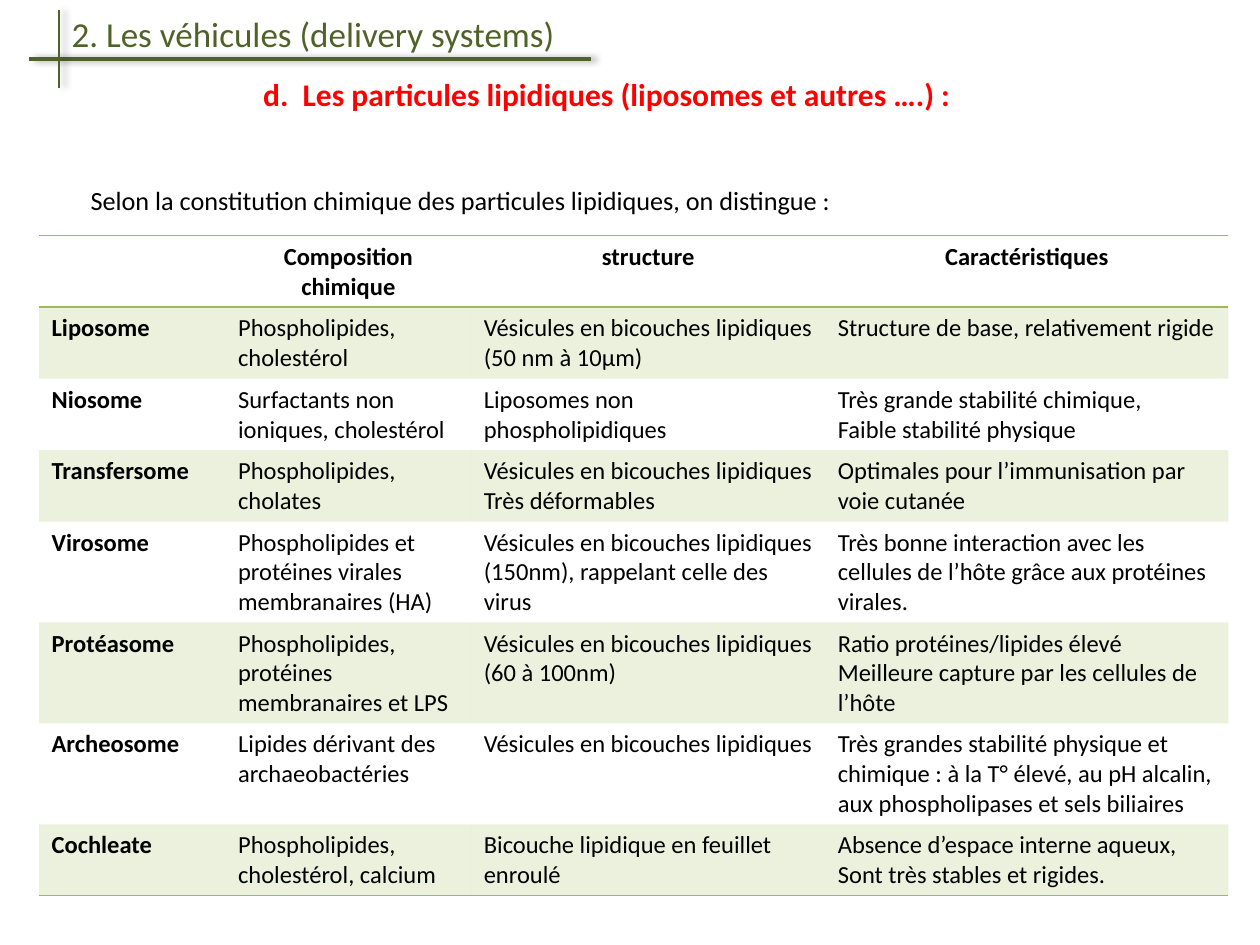
import pptx
import pptx.dml.color
import pptx.enum.shapes
import pptx.enum.text
import pptx.oxml
import pptx.oxml.ns
import pptx.util
from pptx.util import Inches

RGBColor = pptx.dml.color.RGBColor
BLACK = RGBColor(0x00, 0x00, 0x00)
RED = RGBColor(0xFF, 0x00, 0x00)
DARK_GREEN = RGBColor(0x4F, 0x62, 0x28)
GREEN = RGBColor(0x9B, 0xBB, 0x59)
NAMESPACE = pptx.oxml.ns.nsdecls("a")
PLAIN_TABLE_STYLE = "{2D5ABB26-0587-4C30-8999-92F81FD0307C}"


def set_font(paragraph, **values):
    for name, value in {"name": "Calibri", **values}.items():
        if name == "color":
            paragraph.font.color.rgb = value
        else:
            setattr(paragraph.font, name, value)


def add_border(cell, side):
    cell._tc.get_or_add_tcPr().insert(0, pptx.oxml.parse_xml(
        f'<a:{side} {NAMESPACE} w="12700"><a:solidFill><a:srgbClr val="{GREEN}"/>'
        f'</a:solidFill></a:{side}>'))


presentation = pptx.Presentation()
presentation.slide_width = Inches(10)
presentation.slide_height = Inches(7.5)
slide = presentation.slides.add_slide(presentation.slide_layouts[6])

# Headings and introduction
texts = [
    ("2. Les véhicules (delivery systems)", (0.47, 0.05, 4.92, 0.44), 20, DARK_GREEN, False),
    ("d.  Les particules lipidiques (liposomes et autres ….) :",
     (1.99, 0.55, 5.92, 0.4), 18, RED, True),
    ("Selon la constitution chimique des particules lipidiques, on distingue :",
     (0.62, 1.41, 8.91, 0.35), 15, BLACK, False),
]
for text, place, size, color, bold in texts:
    shape = slide.shapes.add_textbox(*map(Inches, place))
    shape.text_frame.word_wrap = True
    shape.text_frame.text = text
    set_font(shape.text_frame.paragraphs[0], size=pptx.util.Pt(size), color=color, bold=bold)

# Crossed title rules with a soft shadow
for start_x, start_y, end_x, end_y, width in [
    (0.23, 0.47, 4.69, 0.47, 0),
    (0.47, 0.08, 0.47, 0.7, 0.9),
]:
    connector = slide.shapes.add_connector(
        pptx.enum.shapes.MSO_CONNECTOR.STRAIGHT,
        Inches(start_x), Inches(start_y), Inches(end_x), Inches(end_y))
    connector.line.color.rgb = DARK_GREEN
    connector.line.width = pptx.util.Pt(width)
    connector._element.spPr.append(pptx.oxml.parse_xml(
        f'<a:effectLst {NAMESPACE}><a:outerShdw blurRad="50800" dist="38100" dir="0">'
        '<a:srgbClr val="000000"><a:alpha val="40000"/></a:srgbClr>'
        '</a:outerShdw></a:effectLst>'))

# Comparison table
rows = [
    ("", "Composition chimique", "structure", "Caractéristiques"),
    ("Liposome", "Phospholipides, cholestérol",
     "Vésicules en bicouches lipidiques (50 nm à 10µm)",
     "Structure de base, relativement rigide"),
    ("Niosome", "Surfactants non ioniques, cholestérol",
     "Liposomes non phospholipidiques",
     "Très grande stabilité chimique,\nFaible stabilité physique"),
    ("Transfersome", "Phospholipides, cholates",
     "Vésicules en bicouches lipidiques Très déformables",
     "Optimales pour l’immunisation par voie cutanée"),
    ("Virosome", "Phospholipides et protéines virales membranaires (HA)",
     "Vésicules en bicouches lipidiques (150nm), rappelant celle des virus",
     "Très bonne interaction avec les cellules de l’hôte grâce aux protéines virales."),
    ("Protéasome", "Phospholipides, protéines membranaires et LPS",
     "Vésicules en bicouches lipidiques (60 à 100nm)",
     "Ratio protéines/lipides élevé\nMeilleure capture par les cellules de l’hôte"),
    ("Archeosome", "Lipides dérivant des archaeobactéries",
     "Vésicules en bicouches lipidiques",
     "Très grandes stabilité physique et chimique : à la T° élevé, au pH alcalin, "
     "aux phospholipases et sels biliaires"),
    ("Cochleate", "Phospholipides, cholestérol, calcium",
     "Bicouche lipidique en feuillet enroulé",
     "Absence d’espace interne aqueux,\nSont très stables et rigides."),
]
three_line_rows = (4, 5, 6)
last_row = len(rows) - 1
table = slide.shapes.add_table(
    len(rows), 4, Inches(0.31), Inches(1.87), Inches(9.45), Inches(5.23)).table
table.first_row = table.horz_banding = False
table._tbl.tblPr.find(pptx.oxml.ns.qn("a:tableStyleId")).text = PLAIN_TABLE_STYLE
for column, width in zip(table.columns, (1.48, 1.95, 2.81, 3.2)):
    column.width = Inches(width)

for row_index, row in enumerate(rows):
    table.rows[row_index].height = Inches(0.8 if row_index in three_line_rows else 0.56)
    for column_index, text in enumerate(row):
        cell = table.cell(row_index, column_index)
        cell.text = text
        for paragraph in cell.text_frame.paragraphs:
            set_font(paragraph, size=pptx.util.Pt(14), color=BLACK,
                     bold=row_index == 0 or column_index == 0)
            if row_index == 0:
                paragraph.alignment = pptx.enum.text.PP_ALIGN.CENTER
        # Odd rows carry a translucent green band
        if row_index % 2:
            cell.fill.solid()
            cell.fill.fore_color.rgb = GREEN
            color_element = cell._tc.tcPr.find(".//" + pptx.oxml.ns.qn("a:srgbClr"))
            color_element.append(pptx.oxml.parse_xml(f'<a:alpha {NAMESPACE} val="20000"/>'))
        else:
            cell.fill.background()
        if row_index in (0, last_row):
            add_border(cell, "lnB")
        if row_index == 0:
            add_border(cell, "lnT")

presentation.save("out.pptx")
